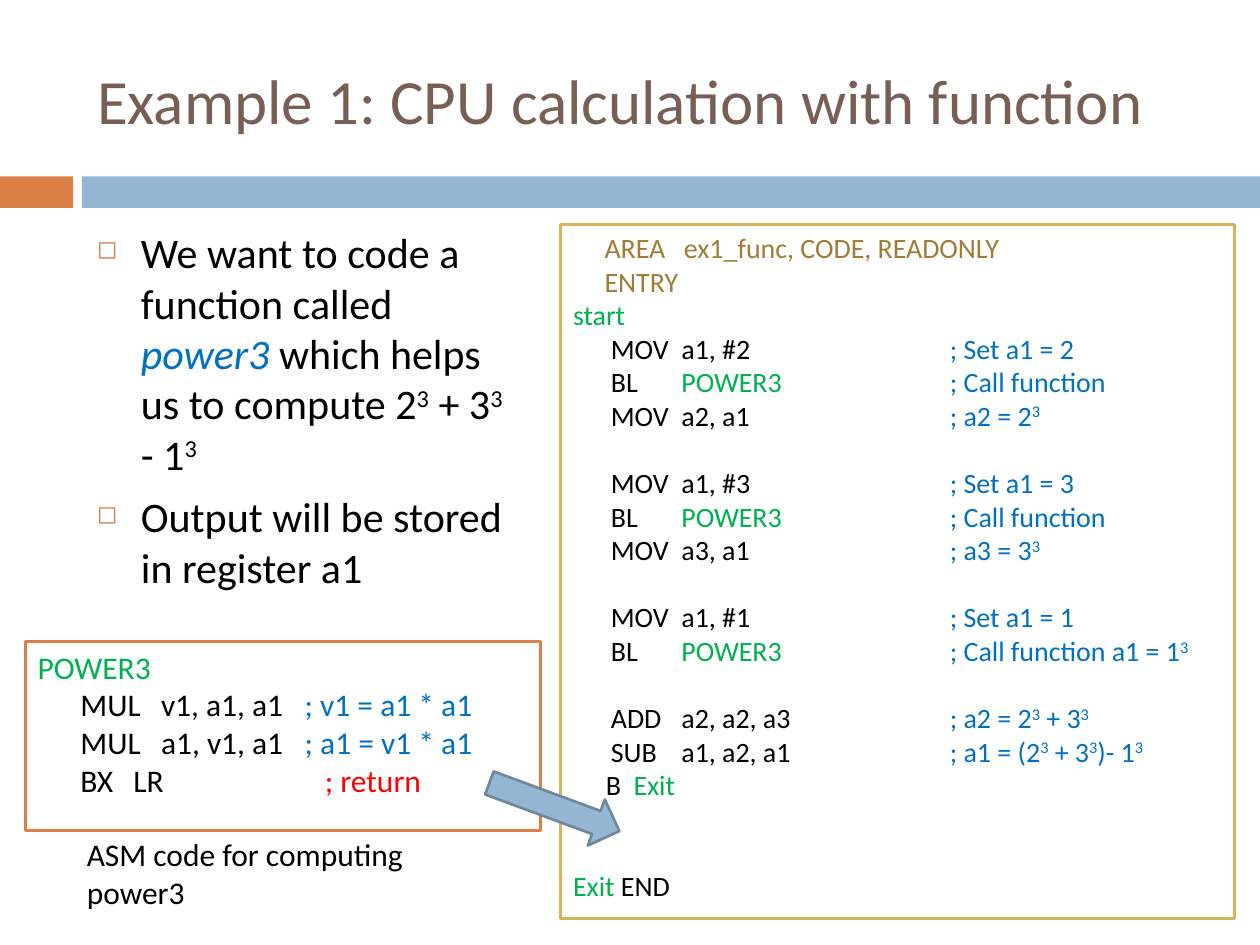
from lxml import etree
from pptx import Presentation
from pptx import util as u
from pptx.dml.color import RGBColor
from pptx.enum import shapes, text
from pptx.oxml.ns import qn

WIDTH, HEIGHT = 10, 7.5
FONT = "Calibri"
BLACK = RGBColor(0x00, 0x00, 0x00)
WHITE = RGBColor(0xFF, 0xFF, 0xFF)
BROWN = RGBColor(0x77, 0x5F, 0x55)
ORANGE = RGBColor(0xDD, 0x80, 0x47)
SKY = RGBColor(0x94, 0xB6, 0xD2)
SLATE = RGBColor(0x6D, 0x87, 0x9B)
GOLD = RGBColor(0xD8, 0xB2, 0x5C)
DARK_GOLD = RGBColor(0xA1, 0x7C, 0x36)
BLUE = RGBColor(0x00, 0x70, 0xC0)
GREEN = RGBColor(0x00, 0xB0, 0x50)
RED = RGBColor(0xFF, 0x00, 0x00)

# Tab stops, in inches from the left edge of the text
DIRECTIVE_TABS = (0.25, 0.88)
MAIN_TABS = (0.3, 0.86, 2.99)
BRANCH_TABS = (0.26, 0.48)
POWER_TABS = (0.34, 0.98, 2.12)
RETURN_TABS = (0.34, 0.76, 2.28)
CODE_LINE = 19.2  # height of one 16 pt line, in points


def box(left, top, width, height):
    return [u.Inches(value) for value in (left, top, width, height)]


def add_block(slide, kind, place, fill, line=None):
    block = slide.shapes.add_shape(kind, *box(*place))
    block.shadow.inherit = False
    block.fill.solid()
    block.fill.fore_color.rgb = fill
    if line is None:
        block.line.fill.background()
    else:
        block.line.color.rgb = line
        block.line.width = u.Pt(1.5)
    return block


def set_tabs(paragraph, stops):
    tab_list = etree.SubElement(paragraph._p.get_or_add_pPr(), qn("a:tabLst"))
    for stop in stops:
        etree.SubElement(tab_list, qn("a:tab"), pos=str(u.Inches(stop)), algn="l")


def set_bullet(paragraph):
    props = paragraph._p.get_or_add_pPr()
    props.set("marL", str(u.Inches(0.35)))
    props.set("indent", str(-u.Inches(0.35)))
    colour = etree.SubElement(props, qn("a:buClr"))
    etree.SubElement(colour, qn("a:srgbClr"), val=str(ORANGE))
    etree.SubElement(props, qn("a:buSzPct"), val="60000")
    etree.SubElement(props, qn("a:buChar"), char="◻")


def add_run(paragraph, words, colour, italic=False, raised=False):
    run = paragraph.add_run()
    run.text = words
    run.font.color.rgb = colour
    if italic:
        run.font.italic = True
    if raised:
        run._r.get_or_add_rPr().set("baseline", "30000")


def write(paragraph, size, pieces):
    """Add (words, colour[, italic]) pieces; ^ raises the character after it."""
    paragraph.alignment = text.PP_ALIGN.LEFT
    paragraph.font.name = FONT
    paragraph.font.size = u.Pt(size)
    for words, *style in pieces:
        plain, *powers = words.split("^")
        add_run(paragraph, plain, *style)
        for power in powers:
            add_run(paragraph, power[0], *style, raised=True)
            if power[1:]:
                add_run(paragraph, power[1:], *style)


def next_paragraph(frame, index):
    return frame.add_paragraph() if index else frame.paragraphs[0]


def add_code(slide, place, border, size, lines):
    """Lines are (tab stops, space before, pieces)."""
    panel = add_block(slide, shapes.MSO_SHAPE.RECTANGLE, place, WHITE, border)
    frame = panel.text_frame
    frame.word_wrap = True
    frame.vertical_anchor = text.MSO_ANCHOR.TOP
    for index, (stops, before, pieces) in enumerate(lines):
        paragraph = next_paragraph(frame, index)
        set_tabs(paragraph, stops)
        if before:
            paragraph.space_before = u.Pt(before)
        write(paragraph, size, pieces)


def add_text(slide, place):
    frame = slide.shapes.add_textbox(*box(*place)).text_frame
    frame.word_wrap = True
    return frame


def add_title(slide, words):
    title = slide.shapes.title
    title.left, title.top, title.width, title.height = box(0.67, 0.25, 8.92, 1.08)
    frame = title.text_frame
    frame.auto_size = text.MSO_AUTO_SIZE.NONE
    frame.vertical_anchor = text.MSO_ANCHOR.MIDDLE
    write(frame.paragraphs[0], 36, [(words, BROWN)])


def add_goals(slide):
    goals = [
        [("We want to code a function called ", BLACK), ("power3", BLUE, True),
         (" which helps us to compute 2^3 + 3^3 - 1^3", BLACK)],
        [("Output will be stored in register a1", BLACK)],
    ]
    frame = add_text(slide, (0.67, 1.75, 3.54, 4.92))
    for index, pieces in enumerate(goals):
        paragraph = next_paragraph(frame, index)
        set_bullet(paragraph)
        paragraph.space_before = u.Pt(7)
        write(paragraph, 24, pieces)


def instruction(name, operands, comment, before=0, stops=MAIN_TABS):
    operand_colour = GREEN if name == "BL" else BLACK
    return (stops, before, [(f"\t{name}\t", BLACK), (f"{operands}\t", operand_colour),
                            (comment, BLUE)])


def power_call(value, before=0, result=""):
    return [instruction("MOV", f"a1, #{value}", f"; Set a1 = {value}", before),
            instruction("BL", "POWER3", f"; Call function{result}")]


def store(register, value):
    return instruction("MOV", f"{register}, a1", f"; {register} = {value}^3")


def main_code():
    return [
        (DIRECTIVE_TABS, 0, [("\tAREA\tex1_func, CODE, READONLY", DARK_GOLD)]),
        (DIRECTIVE_TABS, 0, [("\tENTRY", DARK_GOLD)]),
        (MAIN_TABS, 0, [("start", GREEN)]),
        *power_call(2),
        store("a2", 2),
        *power_call(3, CODE_LINE),
        store("a3", 3),
        *power_call(1, CODE_LINE, " a1 = 1^3"),
        instruction("ADD", "a2, a2, a3", "; a2 = 2^3 + 3^3", CODE_LINE),
        instruction("SUB", "a1, a2, a1", "; a1 = (2^3 + 3^3)- 1^3"),
        (BRANCH_TABS, 0, [("\tB\t", BLACK), ("Exit", GREEN)]),
        (MAIN_TABS, 2 * CODE_LINE, [("Exit", GREEN), (" END", BLACK)]),
    ]


def power_code():
    return [
        (POWER_TABS, 0, [("POWER3", GREEN)]),
        instruction("MUL", "v1, a1, a1", "; v1 = a1 * a1", stops=POWER_TABS),
        instruction("MUL", "a1, v1, a1", "; a1 = v1 * a1", stops=POWER_TABS),
        (RETURN_TABS, 0, [("\tBX\tLR\t", BLACK), ("; return", RED)]),
    ]


def main():
    deck = Presentation()
    deck.slide_width, deck.slide_height = u.Inches(WIDTH), u.Inches(HEIGHT)
    slide = deck.slides.add_slide(deck.slide_layouts.get_by_name("Title Only"))

    band_left = 0.65
    bar = shapes.MSO_SHAPE.RECTANGLE
    add_block(slide, bar, (0, 1.4, 0.58, 0.25), ORANGE)
    add_block(slide, bar, (band_left, 1.4, WIDTH - band_left, 0.25), SKY)
    add_title(slide, "Example 1: CPU calculation with function")
    add_goals(slide)

    add_code(slide, (0.2, 5.09, 4.09, 1.5), ORANGE, 18, power_code())
    caption = add_text(slide, (0.59, 6.58, 3.52, 0.4))
    caption.auto_size = text.MSO_AUTO_SIZE.SHAPE_TO_FIT_TEXT
    write(caption.paragraphs[0], 18, [("ASM code for computing power3", BLACK)])

    add_code(slide, (4.45, 1.78, 5.35, 5.51), GOLD, 16, main_code())
    arrow = add_block(slide, shapes.MSO_SHAPE.RIGHT_ARROW,
                      (3.85, 6.21, 1.1, 0.39), SKY, SLATE)
    arrow.rotation = 20.3
    deck.save("out.pptx")


if __name__ == "__main__":
    main()
